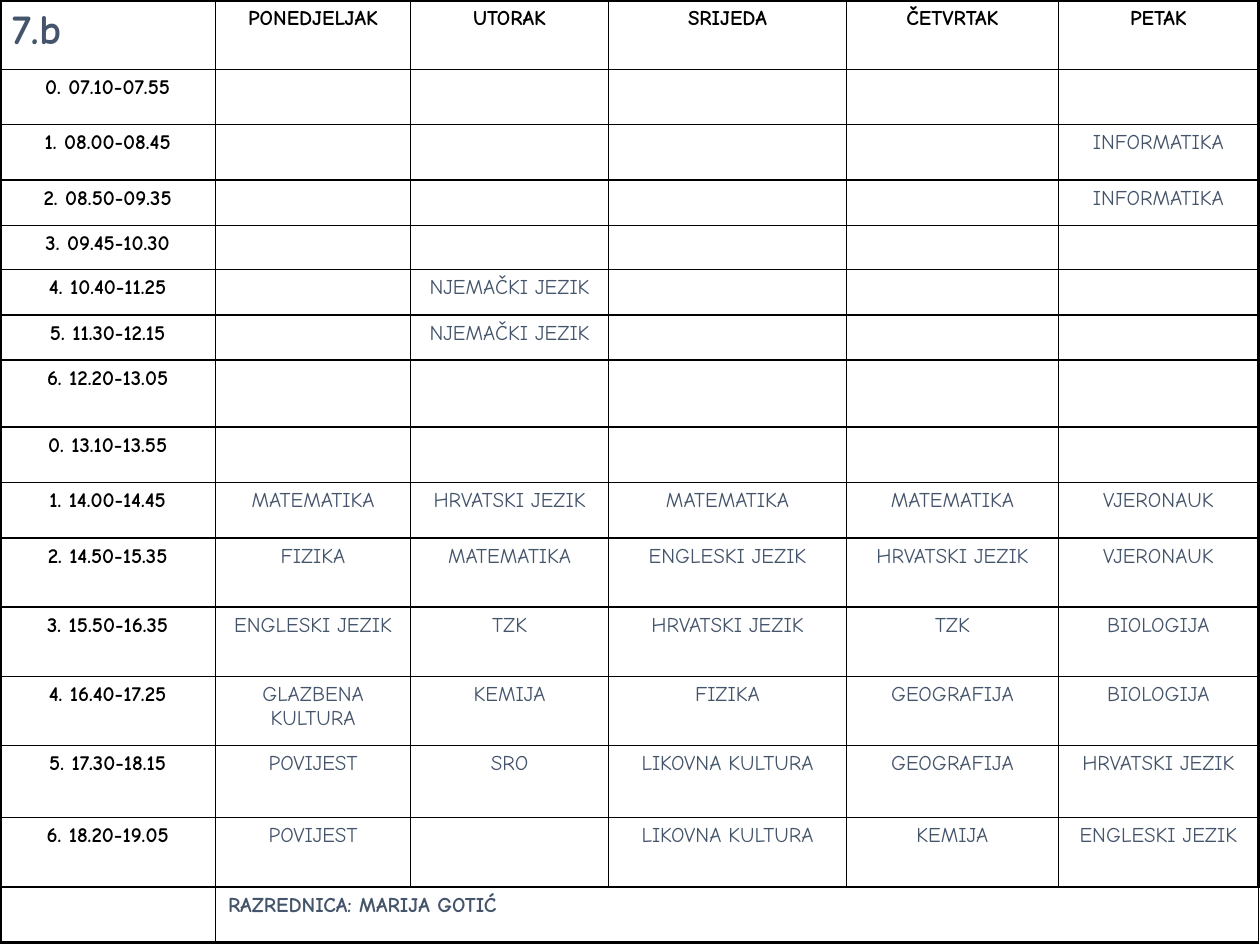
from typing import NamedTuple

from lxml.etree import SubElement
from pptx import Presentation
from pptx.dml.color import RGBColor
from pptx.enum.text import PP_ALIGN
from pptx.oxml.ns import qn
from pptx.util import Inches, Pt

FONT, BLACK, SLATE = "Comic Neue", "000000", "44546A"
THIN, THICK = 1, 2.25
COLUMN_WIDTHS = [1.71, 1.55, 1.57, 1.89, 1.68, 1.59]
DAYS = ["PONEDJELJAK", "UTORAK", "SRIJEDA", "ČETVRTAK", "PETAK"]
HEADER_HEIGHT, FOOTER_HEIGHT = 0.55, 0.44


class Lesson(NamedTuple):
    time: str
    height: float
    subjects: tuple[str, ...] = ("",) * 5


class Style(NamedTuple):
    color: str
    bold: bool
    size: float = 12
    align: PP_ALIGN = PP_ALIGN.CENTER


HEADING = Style(BLACK, True)
SUBJECT = Style(SLATE, False)
CLASS_NAME = Style(SLATE, True, 24, PP_ALIGN.LEFT)
TEACHER = Style(SLATE, True, 12, PP_ALIGN.LEFT)

LESSONS = [
    Lesson("0. 07.10-07.55", 0.44),
    Lesson("1. 08.00-08.45", 0.44, ("", "", "", "", "INFORMATIKA")),
    Lesson("2. 08.50-09.35", 0.36, ("", "", "", "", "INFORMATIKA")),
    Lesson("3. 09.45-10.30", 0.35),
    Lesson("4. 10.40-11.25", 0.36, ("", "NJEMAČKI JEZIK", "", "", "")),
    Lesson("5. 11.30-12.15", 0.36, ("", "NJEMAČKI JEZIK", "", "", "")),
    Lesson("6. 12.20-13.05", 0.53),
    Lesson("0. 13.10-13.55", 0.44),
    Lesson("1. 14.00-14.45", 0.44,
           ("MATEMATIKA", "HRVATSKI JEZIK", "MATEMATIKA", "MATEMATIKA", "VJERONAUK")),
    Lesson("2. 14.50-15.35", 0.55,
           ("FIZIKA", "MATEMATIKA", "ENGLESKI JEZIK", "HRVATSKI JEZIK", "VJERONAUK")),
    Lesson("3. 15.50-16.35", 0.55,
           ("ENGLESKI JEZIK", "TZK", "HRVATSKI JEZIK", "TZK", "BIOLOGIJA")),
    Lesson("4. 16.40-17.25", 0.55,
           ("GLAZBENA KULTURA", "KEMIJA", "FIZIKA", "GEOGRAFIJA", "BIOLOGIJA")),
    Lesson("5. 17.30-18.15", 0.57,
           ("POVIJEST", "SRO", "LIKOVNA KULTURA", "GEOGRAFIJA", "HRVATSKI JEZIK")),
    Lesson("6. 18.20-19.05", 0.55,
           ("POVIJEST", "", "LIKOVNA KULTURA", "KEMIJA", "ENGLESKI JEZIK")),
]


def write(cell, text: str, style: Style) -> None:
    p = cell.text_frame.paragraphs[0]
    p.text = text
    p.alignment = style.align
    p.font.name, p.font.size, p.font.bold = FONT, Pt(style.size), style.bold
    p.font.color.rgb = RGBColor.from_string(style.color)
    if not text:  # keeps an empty cell from forcing its row taller
        SubElement(p._p, qn("a:endParaRPr"), sz=str(style.size * 100))


def draw_borders(cell, outer_sides: set[str]) -> None:
    tcPr = cell._tc.get_or_add_tcPr()
    for side in "LRTB":
        width = THICK if side in outer_sides else THIN
        ln = SubElement(tcPr, qn(f"a:ln{side}"), w=str(Pt(width)))
        SubElement(SubElement(ln, qn("a:solidFill")), qn("a:srgbClr"), val=BLACK)


def outer_sides(row: int, col: int, rows: int, cols: int) -> set[str]:
    edges = {"L": col == 0, "R": col == cols - 1, "T": row == 0, "B": row == rows - 1}
    return {side for side, on_edge in edges.items() if on_edge}


def add_timetable(s) -> None:
    heights = [HEADER_HEIGHT, *(lesson.height for lesson in LESSONS), FOOTER_HEIGHT]
    rows, cols = len(heights), len(COLUMN_WIDTHS)
    table = s.shapes.add_table(rows, cols, 0, 0, Inches(sum(COLUMN_WIDTHS)),
                               Inches(sum(heights))).table
    table.first_row = table.horz_banding = False
    for column, width in zip(table.columns, COLUMN_WIDTHS):
        column.width = Inches(width)

    texts = [["7.b", *DAYS], *([n.time, *n.subjects] for n in LESSONS),
             ["", "RAZREDNICA: MARIJA GOTIĆ", "", "", "", ""]]
    for r, (height, row_texts) in enumerate(zip(heights, texts)):
        table.rows[r].height = Inches(height)
        for c, text in enumerate(row_texts):
            if (r, c) == (0, 0):
                style = CLASS_NAME
            elif r == rows - 1:
                style = TEACHER
            else:
                style = HEADING if r == 0 or c == 0 else SUBJECT
            cell = table.cell(r, c)
            write(cell, text, style)
            draw_borders(cell, outer_sides(r, c, rows, cols))
            cell.fill.background()
    table.cell(rows - 1, 1).merge(table.cell(rows - 1, cols - 1))


def main() -> None:
    prs = Presentation()
    prs.slide_width, prs.slide_height = Inches(10), Inches(7.5)
    s = prs.slides.add_slide(prs.slide_layouts[6])
    add_timetable(s)
    prs.save("out.pptx")


if __name__ == "__main__":
    main()
